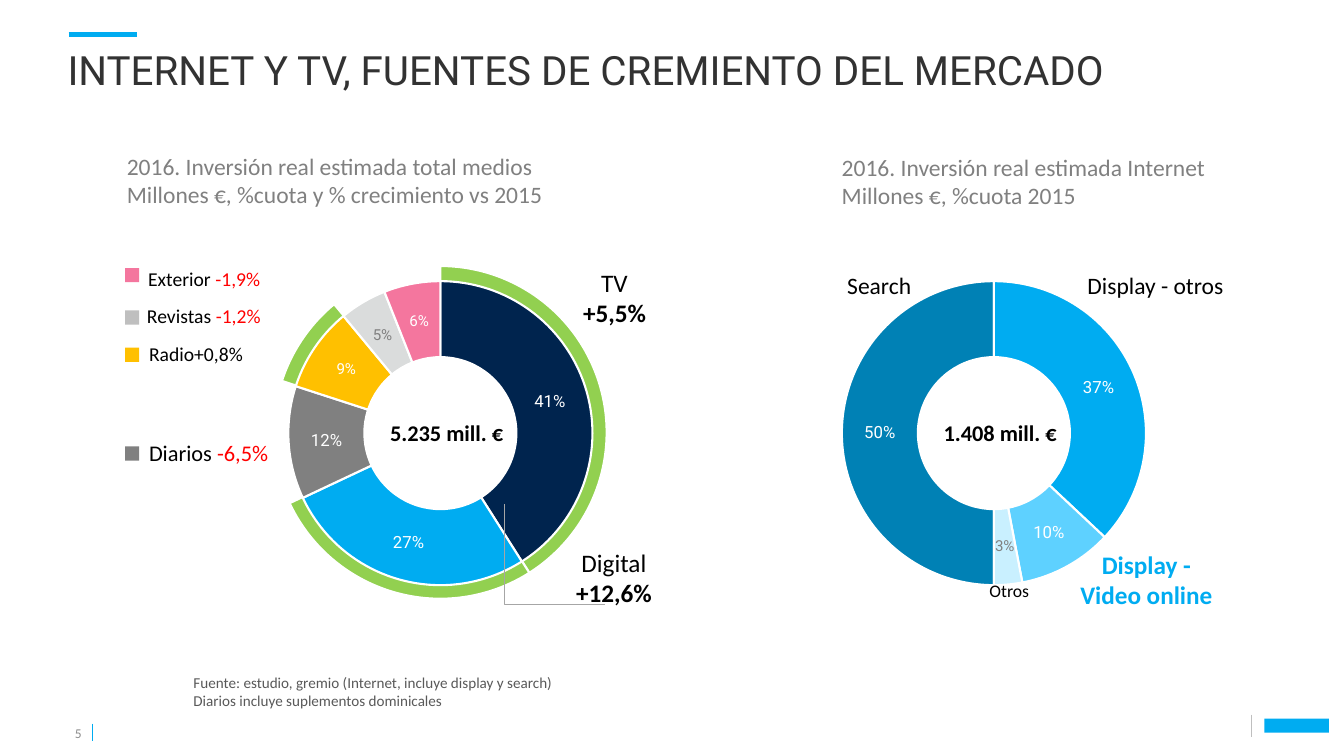
from lxml.etree import SubElement
from pptx import Presentation
from pptx.chart.data import CategoryChartData
from pptx.dml.color import RGBColor
from pptx.enum.chart import XL_CHART_TYPE as ChartType
from pptx.enum.shapes import MSO_CONNECTOR as Connector, MSO_SHAPE as Shape
from pptx.enum.text import MSO_ANCHOR as Anchor, PP_ALIGN as Align
from pptx.oxml.ns import qn
from pptx.util import Inches, Pt

BLACK = RGBColor(0x00, 0x00, 0x00)
WHITE = RGBColor(0xFF, 0xFF, 0xFF)
RED = RGBColor(0xFF, 0x00, 0x00)
CYAN = RGBColor(0x00, 0xAC, 0xF1)
GREEN = RGBColor(0x92, 0xD0, 0x50)
NAVY = RGBColor(0x00, 0x24, 0x4E)
DARK_NAVY = RGBColor(0x00, 0x16, 0x2F)
GRAY = RGBColor(0x80, 0x80, 0x80)
AMBER = RGBColor(0xFF, 0xC0, 0x00)
PALE_GRAY = RGBColor(0xDA, 0xDC, 0xDC)
PINK = RGBColor(0xF4, 0x76, 0x9E)
SEA = RGBColor(0x00, 0x81, 0xB5)
SKY = RGBColor(0x5E, 0xD1, 0xFF)
ICE = RGBColor(0xC9, 0xF0, 0xFF)
SILVER = RGBColor(0xBF, 0xBF, 0xBF)
LEADER = RGBColor(0xA6, 0xA6, 0xA6)
TITLE_INK = RGBColor(0x32, 0x32, 0x32)
SOURCE_INK = RGBColor(0x59, 0x59, 0x59)
NUMBER_INK = RGBColor(0x8C, 0x8C, 0x8C)

TITLE = "INTERNET Y TV, FUENTES DE CREMIENTO DEL MERCADO"
CHART_SIZE = 4.31
RING_PLOT = (0.071, 0.066, 0.766, 0.773)
DONUT_PLOT = (0.167, 0.145, 0.7, 0.707)

# Doughnuts: left, top, plot area, start angle, values, slice colours,
# labels by slice that differ (size, colour), or None for no labels
DOUGHNUTS = [
    (2.41, 2.34, RING_PLOT, 0, (41, 27, 12, 9, 5, 6, 0),
     (GREEN, GREEN, None, GREEN, None, None, GREEN), None),
    (2.14, 2.15, DONUT_PLOT, 0, (0.41, 0.27, 0.12, 0.09, 0.05, 0.06, 0),
     (NAVY, CYAN, GRAY, AMBER, PALE_GRAY, PINK, DARK_NAVY),
     {3: (10.8, WHITE), 4: (10.8, GRAY), 5: (10.8, WHITE)}),
    (7.63, 2.15, DONUT_PLOT, 180, (0.5, 0.37, 0.1, 0.03),
     (SEA, CYAN, SKY, ICE), {3: (10.8, GRAY)}),
]

# Legend: name, growth, growth colour, text size, text box, marker top, marker colour
LEGEND = [
    ("Exterior ", "-1,9%", RED, 14, (1.37, 2.6, 1.33, 0.34), 2.66, PINK),
    ("Revistas ", "-1,2%", RED, 14, (1.36, 2.97, 1.34, 0.34), 3.08, SILVER),
    ("Radio", "+0,8%", BLACK, 14, (1.38, 3.34, 1.14, 0.34), 3.45, AMBER),
    ("Diarios ", "-6,5%", RED, 16, (1.38, 4.31, 1.4, 0.37), 4.43, GRAY),
]
MARKER_LEFT, MARKER_SIZE = 1.24, 0.14

# Captions: box, lines, size, colour, alignment, bold lines
CAPTIONS = [
    ((5.61, 5.38, 0.96, 0.71), ["Digital", "+12,6%"], 18, BLACK, Align.CENTER, {1}),
    ((5.68, 2.6, 0.83, 0.71), ["TV", "+5,5%"], 18, BLACK, Align.CENTER, {1}),
    ((8.3, 2.64, 0.84, 0.38), ["Search"], 16.8, BLACK, Align.CENTER, {}),
    ((10.68, 2.64, 1.56, 0.38), ["Display - otros"], 16.8, BLACK, Align.CENTER, {}),
    ((10.61, 5.4, 1.52, 0.71), ["Display -", "Video online"], 18, CYAN, Align.CENTER, {0, 1}),
    ((9.7, 5.7, 0.62, 0.31), ["Otros"], 12.6, BLACK, Align.CENTER, {}),
    ((1.16, 1.46, 4.36, 0.67),
     ["2016. Inversión real estimada total medios",
      "Millones €, %cuota y % crecimiento vs 2015"], 16.8, GRAY, Align.LEFT, {}),
    ((8.25, 1.47, 3.84, 0.67),
     ["2016. Inversión real estimada Internet",
      "Millones €, %cuota 2015"], 16.8, GRAY, Align.LEFT, {}),
    ((3.77, 4.11, 1.34, 0.37), ["5.235 mill. €"], 16, BLACK, Align.LEFT, {0}),
    ((9.26, 4.11, 1.34, 0.37), ["1.408 mill. €"], 16, BLACK, Align.LEFT, {0}),
    ((1.82, 6.63, 5.88, 0.46),
     ["Fuente: estudio, gremio (Internet, incluye display y search)",
      "Diarios incluye suplementos dominicales"], 10.8, SOURCE_INK, Align.LEFT, {}),
]

# Rules: start, end, colour, width
RULES = [
    ((0.68, 0.34), (1.36, 0.34), CYAN, 3.5),
    ((0.92, 7.18), (0.92, 7.35), CYAN, 0.5),
    ((12.41, 7.09), (12.41, 7.31), SILVER, 1),
]
LEADER_POINTS = [(4.96, 5.47), (4.96, 5.93), (5.76, 5.94)]


def box_of(*lengths):
    return [Inches(length) for length in lengths]


def style(font, size, colour, name="Calibri", bold=False):
    font.size, font.name, font.bold = Pt(size), name, bold
    font.color.rgb = colour


def add_caption(slide, box, lines, size, colour, align, bold_lines):
    caption = slide.shapes.add_textbox(*box_of(*box))
    frame = caption.text_frame
    frame.word_wrap = False
    frame.text = "\n".join(lines)
    for index, paragraph in enumerate(frame.paragraphs):
        paragraph.alignment = align
        style(paragraph.runs[0].font, size, colour, bold=index in bold_lines)
    return frame


def add_block(slide, box, colour):
    block = slide.shapes.add_shape(Shape.RECTANGLE, *box_of(*box))
    block.shadow.inherit = False
    block.fill.solid()
    block.fill.fore_color.rgb = colour
    block.line.fill.background()


def add_doughnut(slide, left, top, plot_box, start, values, colours, labels):
    data = CategoryChartData(number_format="General" if labels is None else "0%")
    data.categories = [str(number) for number in range(1, len(values) + 1)]
    data.add_series("Series 1", values)
    chart = slide.shapes.add_chart(
        ChartType.DOUGHNUT, *box_of(left, top, CHART_SIZE, CHART_SIZE), data).chart
    chart.has_legend = chart.has_title = False
    style(chart.font, 10, BLACK)
    plot = chart.plots[0]
    plot.vary_by_categories = True
    series = plot.series[0]
    for index, colour in enumerate(colours):
        slice_format = series.points[index].format
        if colour is None:
            slice_format.fill.background()
            slice_format.line.fill.background()
        else:
            slice_format.fill.solid()
            slice_format.fill.fore_color.rgb = colour
            slice_format.line.color.rgb = WHITE
            slice_format.line.width = Pt(1.5)
    if labels is not None:
        shares = series.data_labels
        shares.show_value = True
        shares.number_format, shares.number_format_is_linked = "0%;;", False
        style(shares.font, 12, WHITE, "Roboto")
        for index, (size, colour) in labels.items():
            style(series.points[index].data_label.font, size, colour, "Roboto")
    # Plot position, hole and start angle
    area = chart.element.find(".//" + qn("c:plotArea"))
    layout = area.find(qn("c:layout"))
    if layout is None:
        layout = SubElement(area, qn("c:layout"))
        area.insert(0, layout)
    manual = SubElement(layout, qn("c:manualLayout"))
    settings = [("layoutTarget", "inner"), ("xMode", "edge"), ("yMode", "edge")]
    settings += zip("xywh", plot_box)
    for tag, value in settings:
        SubElement(manual, qn("c:" + tag)).set("val", str(value))
    area.find(".//" + qn("c:holeSize")).set("val", "60")
    area.find(".//" + qn("c:firstSliceAng")).set("val", str(start))


def main():
    deck = Presentation()
    deck.slide_width, deck.slide_height = box_of(13.33, 7.5)
    slide = deck.slides.add_slide(deck.slide_layouts[5])

    # Title
    title = slide.shapes.title
    title.left, title.top, title.width, title.height = box_of(0.67, 0.54, 11.98, 1.01)
    frame = title.text_frame
    frame.text = TITLE
    frame.margin_left = frame.margin_right = frame.margin_top = frame.margin_bottom = 0
    frame.vertical_anchor = Anchor.TOP
    heading = frame.paragraphs[0]
    heading.alignment, heading.line_spacing = Align.LEFT, 0.8
    style(heading.runs[0].font, 28.8, TITLE_INK, "Roboto")

    # Rules, brand block and page number
    for start, end, colour, width in RULES:
        rule = slide.shapes.add_connector(Connector.STRAIGHT, *box_of(*start, *end))
        rule.line.color.rgb = colour
        rule.line.width = Pt(width)
        SubElement(rule.element.spPr, qn("a:effectLst"))
    add_block(slide, (12.54, 7.13, 0.64, 0.14), CYAN)
    number = add_caption(slide, (0.55, 7.15, 0.26, 0.2), ["5"], 9.6, NUMBER_INK, Align.RIGHT, {})
    number.margin_left = number.margin_right = number.margin_top = number.margin_bottom = 0
    number.vertical_anchor = Anchor.BOTTOM
    number.word_wrap = True

    # Charts
    for doughnut in DOUGHNUTS:
        add_doughnut(slide, *doughnut)

    # Leader line to Digital
    outline = slide.shapes.build_freeform(*LEADER_POINTS[0], scale=Inches(1))
    outline.add_line_segments(LEADER_POINTS[1:], close=False)
    leader = outline.convert_to_shape()
    leader.shadow.inherit = False
    leader.fill.background()
    leader.line.color.rgb = LEADER
    leader.line.width = Pt(0.75)

    # Legend and captions
    for name, growth, colour, size, box, marker_top, marker_colour in LEGEND:
        entry = add_caption(slide, box, [name], size, BLACK, Align.LEFT, {})
        change = entry.paragraphs[0].add_run()
        change.text = growth
        style(change.font, size, colour)
        add_block(slide, (MARKER_LEFT, marker_top, MARKER_SIZE, MARKER_SIZE), marker_colour)
    for caption in CAPTIONS:
        add_caption(slide, *caption)

    deck.save("out.pptx")


if __name__ == "__main__":
    main()
